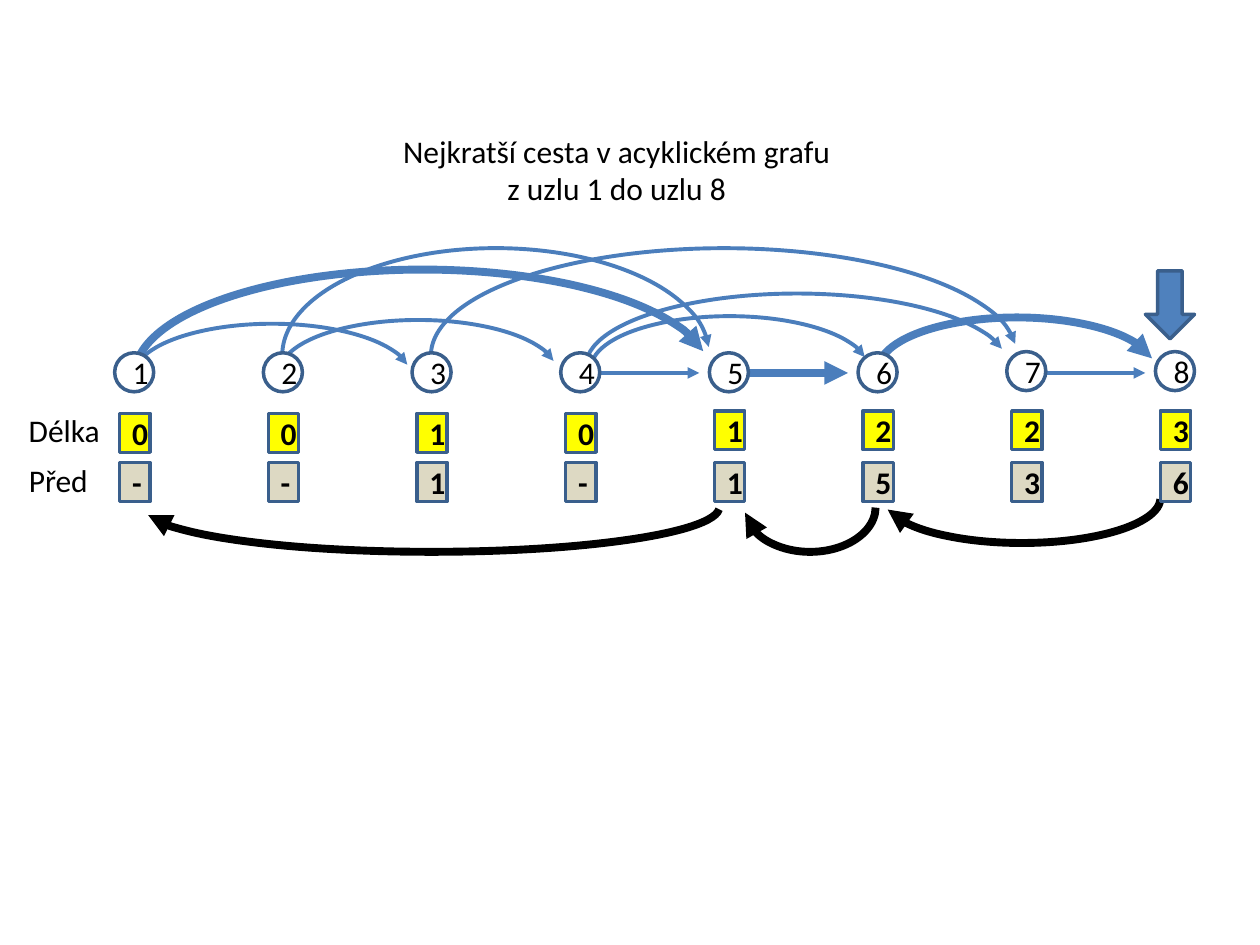
from dataclasses import dataclass

from lxml import etree
from pptx import Presentation
from pptx.dml.color import RGBColor
from pptx.enum.shapes import MSO_CONNECTOR, MSO_SHAPE
from pptx.enum.text import MSO_ANCHOR, PP_ALIGN
from pptx.oxml.ns import qn
from pptx.util import Inches, Pt

ARC = MSO_SHAPE.ARC
OVAL = MSO_SHAPE.OVAL
RECT = MSO_SHAPE.RECTANGLE
DOWN = MSO_SHAPE.DOWN_ARROW
LINE = MSO_CONNECTOR.STRAIGHT
CENTER = PP_ALIGN.CENTER
LEFT = PP_ALIGN.LEFT
MIDDLE = MSO_ANCHOR.MIDDLE

COLORS = {
    "edge": "4B7EBC",
    "rim": "3A5F8C",
    "arrow": "4F81BD",
    "node": "FFFFFF",
    "length": "FFFF00",
    "prior": "DDD9C3",
    "ink": "000000",
}
FONT = "Calibri"
STEP = 1.18
THIN, BOLD = 2.25, 4.5
START = 108.25


@dataclass
class Arc:
    left: float
    top: float
    width: float
    height: float
    weight: float = THIN
    end: float = 213.11
    color: str = "edge"
    flip: bool = False


@dataclass
class Edge:
    start: float
    end: float
    weight: float = THIN


@dataclass
class Row:
    kind: int
    left: float
    width: float
    fill: str
    marks: str
    tops: list[float]
    bold: bool = True


@dataclass
class Label:
    text: str
    top: float
    width: float


EDGES = [
    Arc(1.06, 2.57, 2.2, 0.83),
    Arc(1.07, 2.14, 4.57, 1.67, BOLD),
    Arc(2.24, 1.97, 3.39, 1.7, end=214.65),
    Edge(4.76, 5.55),
    Edge(5.94, 6.73, BOLD),
    Arc(6.97, 2.52, 2.2, 0.83, BOLD),
    Arc(4.69, 2.51, 2.2, 0.83),
    Arc(3.42, 1.97, 4.65, 1.7, end=214.65),
    Arc(4.65, 2.33, 3.35, 1.15),
    Arc(2.22, 2.54, 2.2, 0.83),
    Edge(8.31, 9.09),
]
BACK = [
    Arc(7.01, 3.6, 2.2, 0.71, BOLD, color="ink", flip=True),
    Arc(5.91, 3.67, 1.04, 0.71, BOLD, color="ink", flip=True),
    Arc(1.14, 3.67, 4.57, 0.71, BOLD, 215.04, "ink", True),
]
NODES = Row(OVAL, 0.91, 0.31, "node", "12345678", [2.8] * 6 + [2.79] * 2, False)
CELLS = [
    Row(RECT, 0.95, 0.24, "length", "00101223", [3.28] * 4 + [3.26] * 4),
    Row(RECT, 0.95, 0.24, "prior", "--1-1536", [3.67] * 8),
]
LABELS = [Label("Před", 3.61, 0.68), Label("Délka", 3.21, 0.77)]


def rgb(name: str) -> RGBColor:
    return RGBColor.from_string(COLORS[name])


def write(para, text: str, align=CENTER, bold: bool = False) -> None:
    para.alignment = align
    run = para.add_run()
    run.text = text
    run.font.name = FONT
    run.font.size = Pt(18)
    run.font.bold = bold
    run.font.color.rgb = rgb("ink")


def stroke(shape, color: str, weight: float) -> None:
    shape.line.color.rgb = rgb(color)
    shape.line.width = Pt(weight)


def add_head(shape) -> None:
    ln = shape.element.spPr.get_or_add_ln()
    etree.SubElement(ln, qn("a:tailEnd"), type="triangle")


def add_form(slide, kind, left: float, top: float, width: float, height: float):
    shape = slide.shapes.add_shape(
        kind, Inches(left), Inches(top), Inches(width), Inches(height))
    shape.shadow.inherit = False
    return shape


def draw_arc(slide, arc: Arc) -> None:
    shape = add_form(slide, ARC, arc.left, arc.top, arc.width, arc.height)
    shape.adjustments[0] = START
    shape.adjustments[1] = arc.end
    shape.fill.background()
    stroke(shape, arc.color, arc.weight)
    add_head(shape)
    if arc.flip:
        frame = shape.element.spPr.find(qn("a:xfrm"))
        frame.set("flipH", "1")
        frame.set("flipV", "1")


def draw_edge(slide, edge: Edge) -> None:
    y = Inches(2.96)
    line = slide.shapes.add_connector(
        LINE, Inches(edge.start), y, Inches(edge.end), y)
    stroke(line, "edge", edge.weight)
    add_head(line)
    etree.SubElement(line.element.spPr, qn("a:effectLst"))


def draw_row(slide, row: Row) -> None:
    for i, (mark, top) in enumerate(zip(row.marks, row.tops)):
        shape = add_form(
            slide, row.kind, row.left + i * STEP, top, row.width, 0.31)
        shape.fill.solid()
        shape.fill.fore_color.rgb = rgb(row.fill)
        stroke(shape, "rim", 2)
        shape.text_frame.vertical_anchor = MIDDLE
        write(shape.text_frame.paragraphs[0], mark, bold=row.bold)


def draw_label(slide, label: Label) -> None:
    box = slide.shapes.add_textbox(
        Inches(0.13), Inches(label.top), Inches(label.width), Inches(0.4))
    box.text_frame.word_wrap = False
    write(box.text_frame.paragraphs[0], label.text, LEFT)


def draw_title(slide) -> None:
    title = slide.shapes.title
    title.left, title.top = Inches(3.08), Inches(0.99)
    title.width, title.height = Inches(3.63), Inches(0.71)
    frame = title.text_frame
    frame.word_wrap = False
    write(frame.paragraphs[0], "Nejkratší cesta v acyklickém grafu")
    write(frame.add_paragraph(), "z uzlu 1 do uzlu 8")


def main() -> None:
    deck = Presentation()
    deck.slide_width, deck.slide_height = Inches(10), Inches(7.5)
    slide = deck.slides.add_slide(deck.slide_layouts[5])
    draw_title(slide)
    for edge in EDGES:
        if isinstance(edge, Arc):
            draw_arc(slide, edge)
        else:
            draw_edge(slide, edge)
    draw_row(slide, NODES)
    arrow = add_form(slide, DOWN, 9.09, 2.15, 0.39, 0.54)
    arrow.fill.solid()
    arrow.fill.fore_color.rgb = rgb("arrow")
    stroke(arrow, "rim", 2)
    for label in LABELS:
        draw_label(slide, label)
    for arc in BACK:
        draw_arc(slide, arc)
    for row in CELLS:
        draw_row(slide, row)
    deck.save("out.pptx")


if __name__ == "__main__":
    main()
